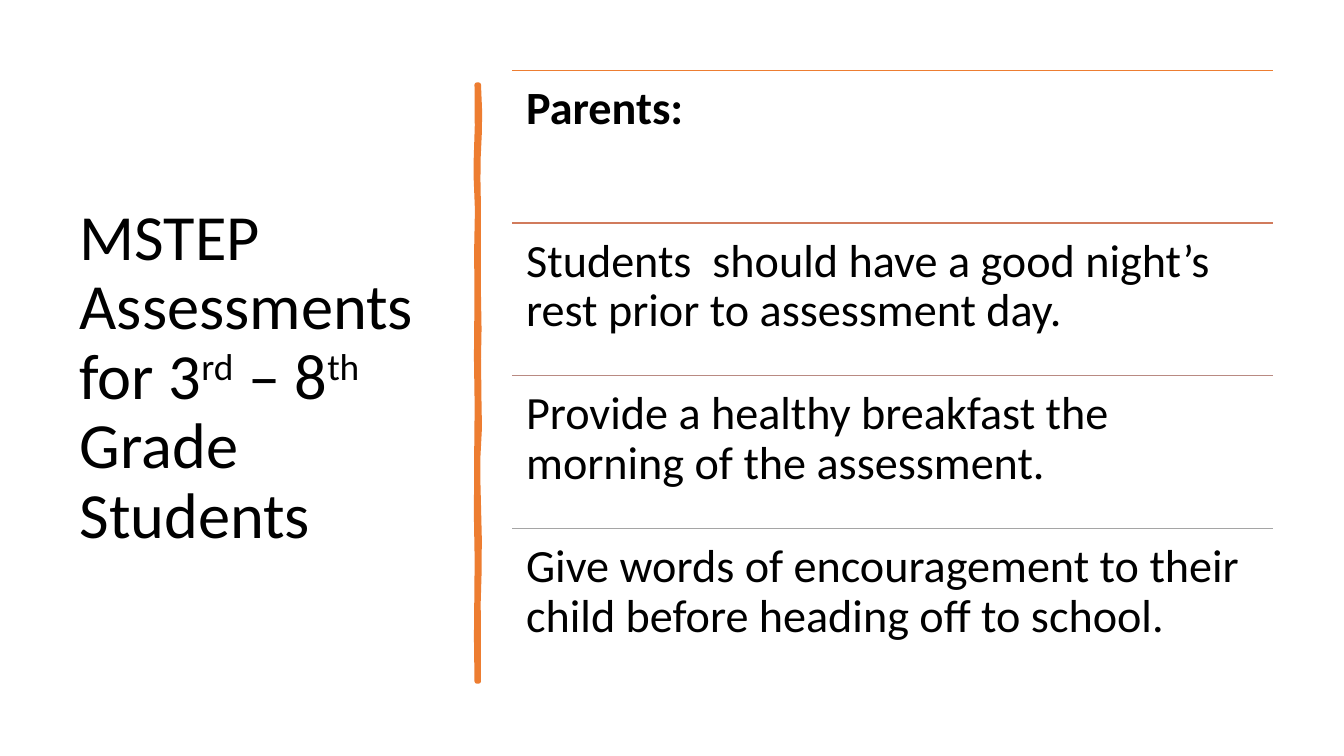
from lxml import etree
from pptx import Presentation
from pptx.dml.color import RGBColor
from pptx.enum.shapes import MSO_CONNECTOR
from pptx.enum.text import MSO_ANCHOR, MSO_AUTO_SIZE, PP_ALIGN
from pptx.oxml.ns import qn
from pptx.util import Pt

STRAIGHT = MSO_CONNECTOR.STRAIGHT
TOP, MIDDLE = MSO_ANCHOR.TOP, MSO_ANCHOR.MIDDLE
LEFT = PP_ALIGN.LEFT
NO_AUTOFIT = MSO_AUTO_SIZE.NONE

FONT = "Calibri"
COLORS = {"text": "000000", "bar": "ED7D31"}

TITLE = [("MSTEP Assessments for 3", False), ("rd", True), (" – 8", False),
         ("th", True), (" Grade Students", False)]
ROWS = [
    ("Parents:", True, "ED7D31"),
    ("Students  should have a good night’s rest prior to assessment day.", False, "D17B5C"),
    ("Provide a healthy breakfast the morning of the assessment.", False, "B98A82"),
    ("Give words of encouragement to their child before heading off to school.", False, "A5A5A5"),
]
ROW_LEFT, ROW_TOP, ROW_WIDTH, ROW_HEIGHT = 365.8, 50.4, 543.6, 109

BAR_RIGHT = [(342, 60.5), (342.8, 80), (342.6, 95), (341.8, 112), (341.6, 128),
             (342, 150), (342, 212), (342.4, 235), (342, 256), (342.4, 290),
             (342.7, 305), (341.6, 326), (341.6, 345), (342.6, 385),
             (342.4, 410), (341.8, 430), (342, 486.7)]
BAR_LEFT = [(340.6, 486.7), (340.2, 455), (340.7, 400), (340.2, 370),
            (340.3, 330), (340.7, 290), (340.2, 255), (340.6, 210),
            (340.3, 180), (340.9, 150), (339.9, 125), (340, 115),
            (340.8, 90), (340.6, 60.5)]


def color(value):
    return RGBColor.from_string(value)


def write(shape, parts, size, bold=False, anchor=TOP, inset=(7.2, 3.6)):
    frame = shape.text_frame
    frame.word_wrap = True
    frame.auto_size = NO_AUTOFIT
    frame.vertical_anchor = anchor
    frame.margin_left = frame.margin_right = Pt(inset[0])
    frame.margin_top = frame.margin_bottom = Pt(inset[1])
    paragraph = frame.paragraphs[0]
    paragraph.alignment = LEFT
    paragraph.line_spacing = 0.9
    for text, raised in parts:
        run = paragraph.add_run()
        run.text = text
        run.font.name = FONT
        run.font.size = Pt(size)
        run.font.bold = bold
        run.font.color.rgb = color(COLORS["text"])
        if raised:
            run.font._element.set("baseline", "30000")


def add_rule(slide, top, line_color):
    rule = slide.shapes.add_connector(
        STRAIGHT, Pt(ROW_LEFT), Pt(top), Pt(ROW_LEFT + ROW_WIDTH), Pt(top))
    rule.line.color.rgb = color(line_color)
    rule.line.width = Pt(1)
    etree.SubElement(rule._element.spPr, qn("a:effectLst"))


def add_bar(slide):
    start, *others = [(Pt(x), Pt(y)) for x, y in BAR_RIGHT + BAR_LEFT]
    builder = slide.shapes.build_freeform(*start)
    builder.add_line_segments(others, close=True)
    bar = builder.convert_to_shape()
    bar.shadow.inherit = False
    bar.fill.solid()
    bar.fill.fore_color.rgb = color(COLORS["bar"])
    bar.line.color.rgb = color(COLORS["bar"])
    bar.line.width = Pt(3.25)
    etree.SubElement(bar.line._ln, qn("a:round"))


def main():
    presentation = Presentation()
    presentation.slide_width, presentation.slide_height = Pt(960), Pt(540)
    slide = presentation.slides.add_slide(presentation.slide_layouts[5])

    title = slide.shapes.title
    title.left, title.top, title.width, title.height = Pt(49.7), Pt(50.4), Pt(269.3), Pt(440)
    write(title, TITLE, 46, anchor=MIDDLE)
    add_bar(slide)

    for index, (text, bold, line_color) in enumerate(ROWS):
        top = ROW_TOP + index * ROW_HEIGHT
        add_rule(slide, top, line_color)
        box = slide.shapes.add_textbox(Pt(ROW_LEFT), Pt(top), Pt(ROW_WIDTH), Pt(ROW_HEIGHT))
        write(box, [(text, False)], 33, bold=bold, inset=(10, 10))

    presentation.save("out.pptx")


if __name__ == "__main__":
    main()
